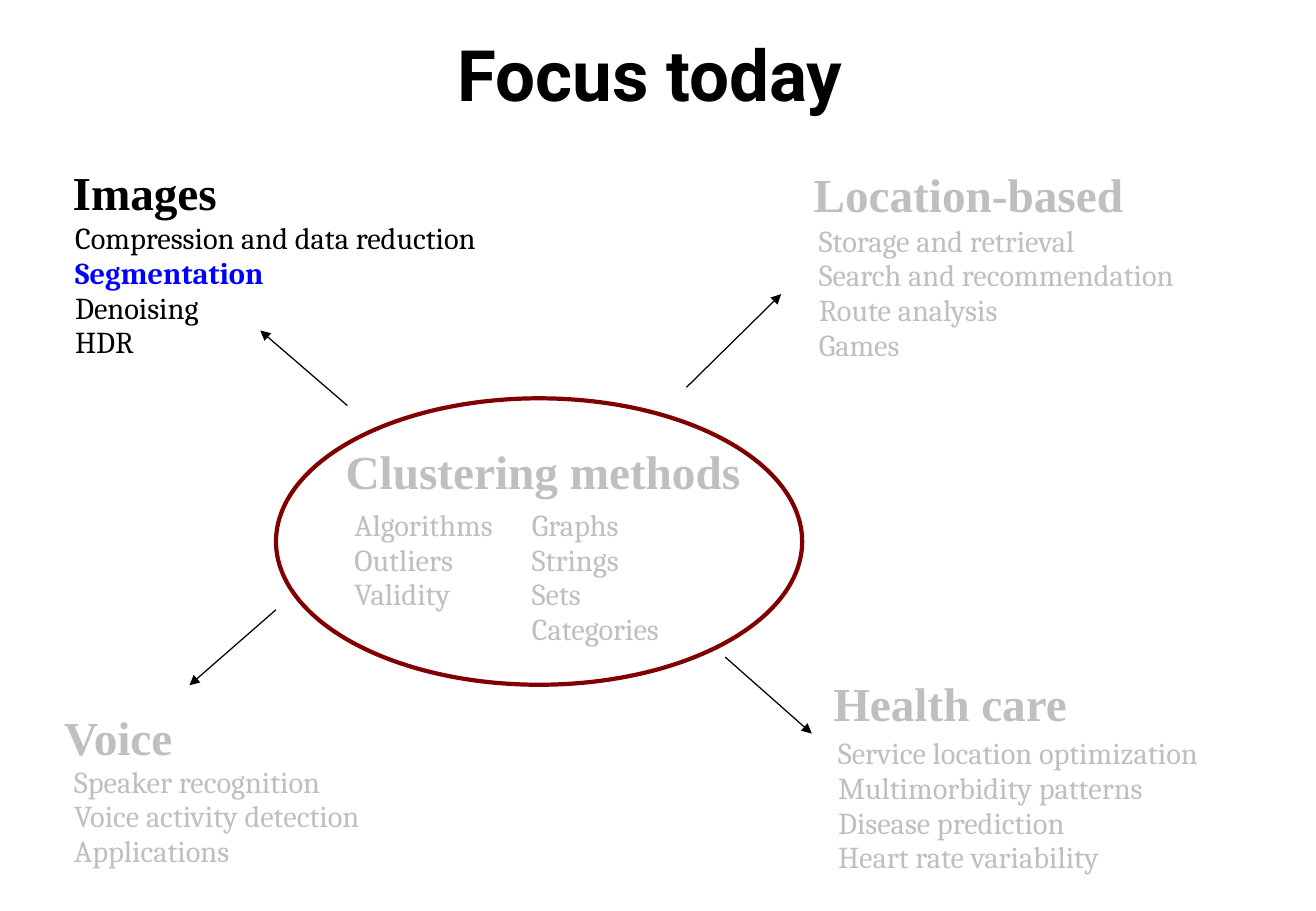
from lxml.etree import SubElement
from pptx import Presentation
from pptx.dml.color import RGBColor
from pptx.enum.shapes import MSO_CONNECTOR as CONN, MSO_SHAPE as SHAPE
from pptx.enum.text import MSO_ANCHOR as ANCHOR, PP_ALIGN as ALIGN
from pptx.oxml.ns import qn
from pptx.util import Cm, Pt

COLORS = {"black": "000000", "gray": "BFBFBF", "blue": "0000FF", "maroon": "800000"}


def rgb(name):
    return RGBColor.from_string(COLORS[name])


class Deck:
    title_font, head_font, list_font = "Roboto", "Times New Roman", "Cambria"

    def __init__(self, width, height):
        self.prs = Presentation()
        self.prs.slide_width, self.prs.slide_height = Cm(width), Cm(height)
        self.s = self.prs.slides.add_slide(self.prs.slide_layouts[5])

    def style(self, p, font, size, color, bold=False, spacing=None):
        p.font.name, p.font.size, p.font.bold = font, Pt(size), bold
        p.font.color.rgb = rgb(color)
        p.line_spacing = spacing

    def title(self, text, x, y, w, h):
        sp = self.s.shapes.title
        sp.left, sp.top, sp.width, sp.height = Cm(x), Cm(y), Cm(w), Cm(h)
        tf = sp.text_frame
        tf.text = text
        tf.vertical_anchor = ANCHOR.MIDDLE
        tf.margin_left = tf.margin_top = tf.margin_right = tf.margin_bottom = 0
        p = tf.paragraphs[0]
        p.alignment = ALIGN.CENTER
        self.style(p, self.title_font, 42, "black", True, 0.93)

    def box(self, text, x, y, w, h):
        tf = self.s.shapes.add_textbox(Cm(x), Cm(y), Cm(w), Cm(h)).text_frame
        tf.word_wrap = True
        tf.text = text
        return tf.paragraphs

    def heading(self, text, x, y, w, color="gray", align=ALIGN.LEFT):
        p = self.box(text, x, y, w, 1.45)[0]
        p.alignment = align
        self.style(p, self.head_font, 28, color, True)

    def topics(self, items, x, y, w, color="gray", focus=None):
        for p in self.box("\n".join(items), x, y, w, 0.25 + 0.74 * len(items)):
            hit = p.text == focus
            self.style(p, self.list_font, 18, "blue" if hit else color, hit, 0.95)

    def ellipse(self, x, y, w, h):
        sp = self.s.shapes.add_shape(SHAPE.OVAL, Cm(x), Cm(y), Cm(w), Cm(h))
        sp.shadow.inherit = False
        sp.fill.background()
        sp.line.color.rgb, sp.line.width = rgb("maroon"), Pt(2.5)

    def arrow(self, *ends):
        c = self.s.shapes.add_connector(CONN.STRAIGHT, *map(Cm, ends))
        c.line.color.rgb, c.line.width = rgb("black"), Pt(0.75)
        SubElement(c.line._get_or_add_ln(), qn("a:tailEnd"), type="triangle")
        SubElement(c._element.spPr, qn("a:effectLst"))


def main():
    d = Deck(27.51, 19.05)
    d.title("Focus today", 2.16, 0.53, 22.86, 2.21)

    d.heading("Images", 1.27, 3.28, 5.05, "black")
    d.topics(["Compression and data reduction", "Segmentation", "Denoising", "HDR"],
             1.32, 4.52, 9.1, "black", "Segmentation")

    d.heading("Location-based", 16.76, 3.33, 7.32)
    d.topics(["Storage and retrieval", "Search and recommendation", "Route analysis", "Games"],
             16.87, 4.57, 8.31)

    d.ellipse(5.77, 8.33, 11, 5.99)
    d.heading("Clustering methods", 6.35, 9.12, 10, align=ALIGN.CENTER)
    d.topics(["Algorithms", "Outliers", "Validity"], 7.16, 10.52, 3.68)
    d.topics(["Graphs", "Strings", "Sets", "Categories"], 10.87, 10.52, 3.68)

    d.heading("Voice", 1.09, 14.68, 4.6)
    d.topics(["Speaker recognition", "Voice activity detection", "Applications"],
             1.3, 15.88, 7.01)

    d.heading("Health care", 17.17, 13.97, 8.48)
    d.topics(["Service location optimization", "Multimorbidity patterns",
              "Disease prediction", "Heart rate variability"], 17.27, 15.29, 8.41)

    for ends in [(7.26, 8.48, 5.44, 6.91), (14.35, 8.1, 16.33, 6.15),
                 (15.16, 13.74, 16.97, 15.34), (5.77, 12.75, 3.96, 14.33)]:
        d.arrow(*ends)

    d.prs.save("out.pptx")


if __name__ == "__main__":
    main()
